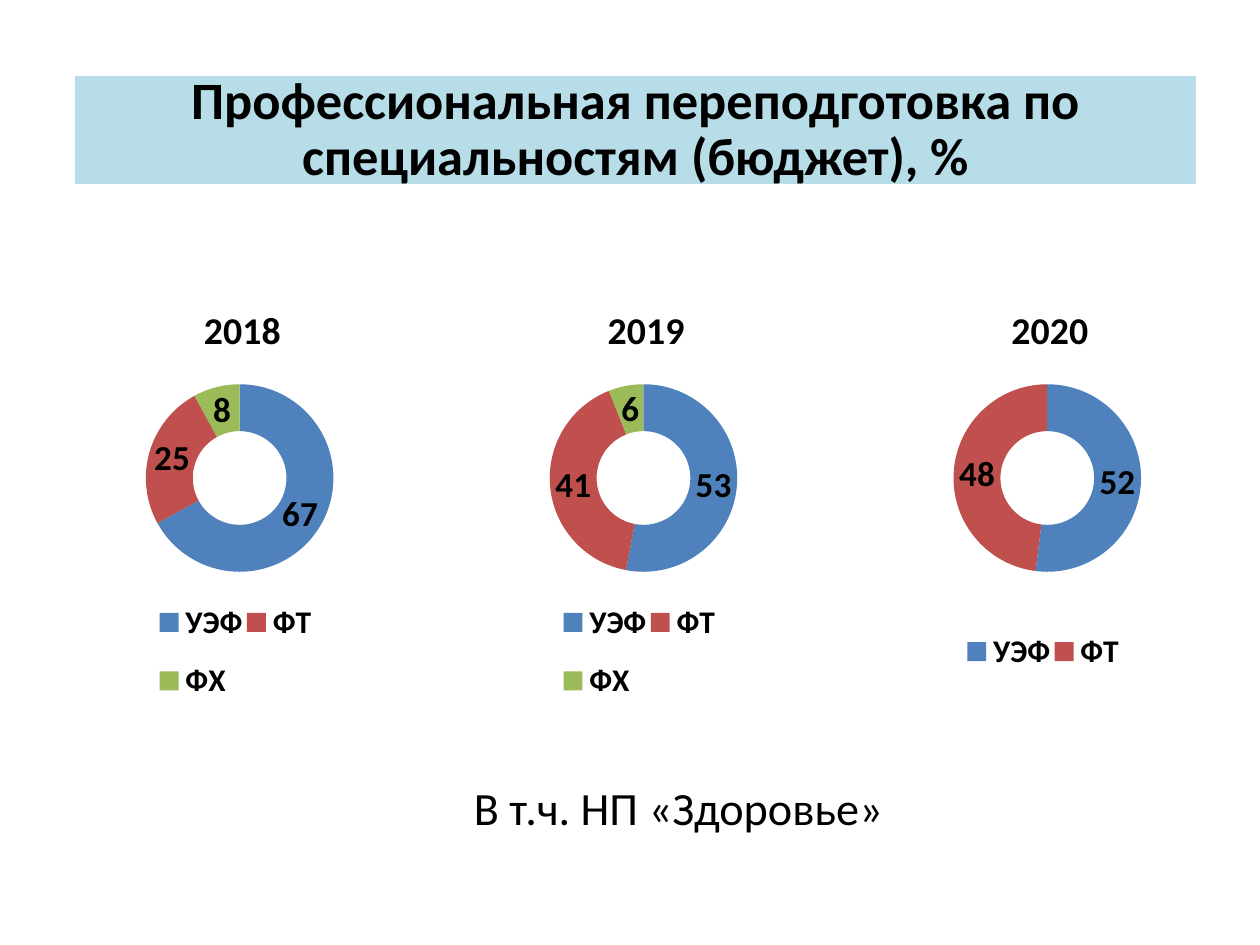
from dataclasses import dataclass
from typing import Optional

from lxml import etree
from pptx import Presentation
from pptx import util as u
from pptx.chart.data import CategoryChartData
from pptx.dml.color import RGBColor
from pptx.enum import chart as ch, shapes, text
from pptx.oxml.ns import qn

BLACK = RGBColor(0, 0, 0)
WHITE = RGBColor(255, 255, 255)
BANNER = RGBColor(0xB7, 0xDE, 0xE8)
SLICES = (RGBColor(0x4F, 0x81, 0xBD), RGBColor(0xC0, 0x50, 0x4D), RGBColor(0x9B, 0xBB, 0x59))
FONT = "Calibri"
SPECIALTIES = ("УЭФ", "ФТ", "ФХ")

# Row of rings: first left edge, step between columns, top, size (inches)
RING_LEFT, RING_STEP, RING_TOP = 0.62, 3.205, 2.11
RING_WIDTH, RING_HEIGHT = 2.55, 4.03


@dataclass
class Year:
    label: str
    shares: tuple[Optional[int], ...]


YEARS = (
    Year("2018", (67, 25, 8)),
    Year("2019", (53, 41, 6)),
    Year("2020", (52, 48, None)),
)


def set_font(font, size: float, bold: bool = False) -> None:
    font.name, font.size, font.bold = FONT, u.Pt(size), bold
    font.color.rgb = BLACK


def place(part, index: int, inner: bool = False, **shares: float) -> None:
    """Give a chart part a manual layout in shares of the chart's size."""
    for old in part.findall(qn("c:layout")):
        part.remove(old)
    layout = etree.Element(qn("c:layout"))
    manual = etree.SubElement(layout, qn("c:manualLayout"))
    settings = {"layoutTarget": "inner"} if inner else {}
    settings |= {"xMode": "edge", "yMode": "edge"}
    settings |= {key: str(share) for key, share in shares.items()}
    for tag, value in settings.items():
        etree.SubElement(manual, qn(f"c:{tag}")).set("val", value)
    part.insert(index, layout)


def hide_legend_entry(legend, index: int) -> None:
    entry = etree.Element(qn("c:legendEntry"))
    etree.SubElement(entry, qn("c:idx")).set("val", str(index))
    etree.SubElement(entry, qn("c:delete")).set("val", "1")
    legend.insert(1, entry)


def add_ring(slide, column: int, year: Year) -> None:
    data = CategoryChartData()
    data.categories = SPECIALTIES
    data.add_series("Series 1", year.shares)
    ring = slide.shapes.add_chart(
        ch.XL_CHART_TYPE.DOUGHNUT,
        u.Inches(RING_LEFT + column * RING_STEP), u.Inches(RING_TOP),
        u.Inches(RING_WIDTH), u.Inches(RING_HEIGHT), data).chart
    set_font(ring.font, 18)

    # Year above the ring
    ring.has_title = True
    heading = ring.chart_title.text_frame
    heading.text = year.label
    set_font(heading.paragraphs[0].font, 21.6, True)
    ring.chart_title.include_in_layout = False
    place(ring.chart_title._element, 1, x=0.37, y=0.06)

    # Slices and their values
    plot = ring.plots[0]
    plot.vary_by_categories = True
    for index, color in enumerate(SLICES):
        fill = plot.series[0].points[index].format.fill
        fill.solid()
        fill.fore_color.rgb = color
    plot.has_data_labels = True
    plot.data_labels.show_value = True
    plot.data_labels.show_percentage = False
    set_font(plot.data_labels.font, 20, True)
    place(ring._chartSpace.chart.plotArea, 0, inner=True, x=0.211, y=0.211, w=0.584, h=0.414)

    # Legend below, without specialties that have no share
    ring.has_legend = True
    ring.legend.position = ch.XL_LEGEND_POSITION.RIGHT
    ring.legend.include_in_layout = False
    set_font(ring.legend.font, 18, True)
    legend = ring.legend._element
    place(legend, 1, x=0.24, y=0.625, w=0.5, h=0.27)
    for index, share in enumerate(year.shares):
        if share is None:
            hide_legend_entry(legend, index)


def write(frame, line: str, size: float, spacing: float, bold: bool = False) -> None:
    frame.word_wrap = True
    frame.vertical_anchor = text.MSO_ANCHOR.MIDDLE
    paragraph = frame.paragraphs[0]
    paragraph.text = line
    paragraph.alignment = text.PP_ALIGN.CENTER
    paragraph.line_spacing = spacing
    set_font(paragraph.font, size, bold)


def main() -> None:
    deck = Presentation()
    deck.slide_width, deck.slide_height = u.Inches(10), u.Inches(7.5)
    slide = deck.slides.add_slide(deck.slide_layouts[6])

    for column, year in enumerate(YEARS):
        add_ring(slide, column, year)

    # Note under the charts
    note = slide.shapes.add_textbox(u.Inches(3.59), u.Inches(6.17), u.Inches(3.59), u.Inches(0.55))
    write(note.text_frame, "В т.ч. НП «Здоровье»", 26.4, 0.8)

    # Title banner
    banner = slide.shapes.add_shape(
        shapes.MSO_SHAPE.RECTANGLE, u.Inches(0.59), u.Inches(0.6), u.Inches(8.91), u.Inches(0.87))
    banner.shadow.inherit = False
    banner.fill.solid()
    banner.fill.fore_color.rgb = BANNER
    banner.line.color.rgb = WHITE
    banner.line.width = u.Pt(0.75)
    write(banner.text_frame, "Профессиональная переподготовка по специальностям (бюджет), %",
          30, 0.9, True)

    deck.save("out.pptx")


if __name__ == "__main__":
    main()
